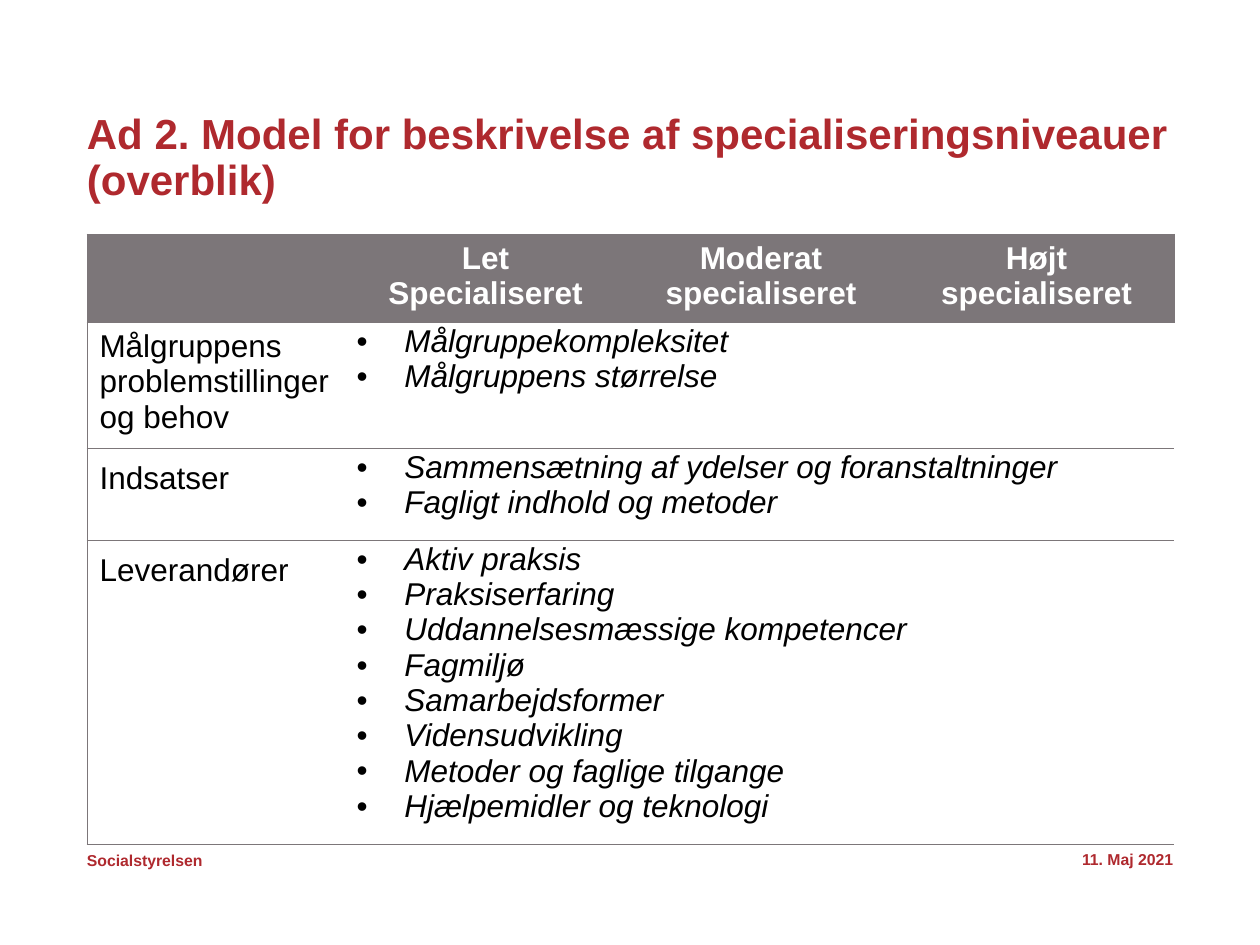
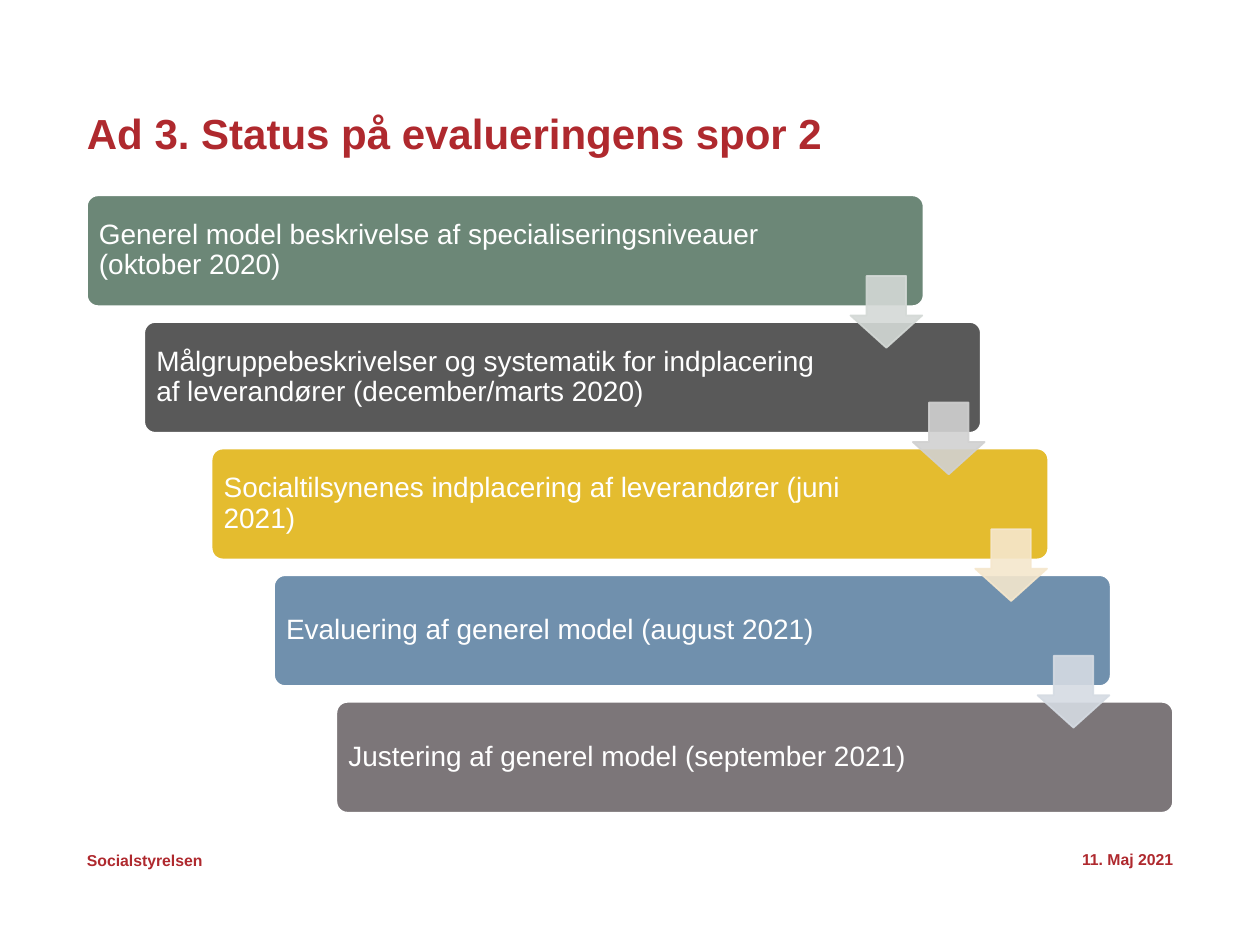
from dataclasses import dataclass
from typing import Optional

from lxml.etree import SubElement
from pptx import Presentation
from pptx.dml.color import RGBColor
from pptx.enum.shapes import MSO_SHAPE as Shape
from pptx.enum.text import MSO_ANCHOR as Anchor, PP_ALIGN as Align
from pptx.oxml.ns import qn
from pptx.util import Emu, Inches, Pt

SLIDE_WIDTH, SLIDE_HEIGHT = Inches(10), Inches(7.5)
GRID_COLUMNS, GRID_ROWS = 100, 75

FONT = "Arial"
RED, GREY, WHITE, BLACK = "AF292E", "7C7679", "FFFFFF", "000000"
LEFT, CONTENT_WIDTH = 6.9, 86.3


@dataclass(frozen=True)
class Box:
    """A place on the slide, in grid columns and rows."""
    left: float
    top: float
    width: float
    height: float

    def emu(self) -> tuple:
        return columns(self.left), rows(self.top), columns(self.width), rows(self.height)


@dataclass(frozen=True)
class Style:
    size: float
    color: str
    bold: bool = False
    italic: bool = False
    align: Align = Align.LEFT
    line_spacing: float = 1.0


@dataclass(frozen=True)
class Topic:
    """A table row: its label, its criteria and the space above the label."""
    label: str
    criteria: tuple
    height: float
    label_top: float


@dataclass(frozen=True)
class Step:
    text: str
    color: str
    arrow_color: Optional[str] = None
    shift: float = 0


TITLE_STYLE = Style(24, RED, bold=True, line_spacing=0.9)
FOOTER_STYLE = Style(9, RED, bold=True)
DATE_STYLE = Style(9, RED, bold=True, align=Align.RIGHT)
HEADER_STYLE = Style(18, WHITE, bold=True, align=Align.CENTER)
LABEL_STYLE = Style(18, BLACK)
CRITERION_STYLE = Style(18, BLACK, italic=True)
STEP_STYLE = Style(16, WHITE, line_spacing=0.9)

TITLE_BOX = Box(LEFT, 9, 86.4, 8.3)
AGENCY_BOX = Box(LEFT, 67.5, 20, 1.5)
DATE_BOX = Box(70.6, 66.2, 22.5, 4)

LEVELS = (("Let", "Specialiseret"), ("Moderat specialiseret",), ("Højt specialiseret",))
TABLE_TOP, HEADER_HEIGHT, LABEL_WIDTH = 18.6, 6.6, 20.7
LEVEL_WIDTH = (CONTENT_WIDTH - LABEL_WIDTH) / len(LEVELS)
TOPICS = (
    Topic("Målgruppens problemstillinger og behov",
          ("Målgruppekompleksitet", "Målgruppens størrelse"), 9.4, 0.5),
    Topic("Indsatser",
          ("Sammensætning af ydelser og foranstaltninger", "Fagligt indhold og metoder"), 7.3, 1),
    Topic("Leverandører",
          ("Aktiv praksis", "Praksiserfaring", "Uddannelsesmæssige kompetencer", "Fagmiljø",
           "Samarbejdsformer", "Vidensudvikling", "Metoder og faglige tilgange",
           "Hjælpemidler og teknologi"), 22.5, 1),
)

FIRST_STEP = Box(LEFT, 15.5, 66.4, 8.8)
STEP_RIGHT, STEP_DOWN = 4.95, 10.05
ARROW_RIGHT, ARROW_DOWN, ARROW_SIZE = 60.6, 6.4, 5.7
STEPS = (
    Step("Generel model beskrivelse af specialiseringsniveauer (oktober 2020)",
         "6C8777", "D4D9D6"),
    Step("Målgruppebeskrivelser og systematik for indplacering af leverandører "
         "(december/marts 2020)", "595959", "D1D1D1", shift=-0.4),
    Step("Socialtilsynenes indplacering af leverandører (juni 2021)", "E4BC2F", "F5E7CD"),
    Step("Evaluering af generel model (august 2021)", "7090AD", "D5DBE3"),
    Step("Justering af generel model (september 2021)", GREY),
)


def columns(count: float) -> Emu:
    return Emu(round(SLIDE_WIDTH * count / GRID_COLUMNS))


def rows(count: float) -> Emu:
    return Emu(round(SLIDE_HEIGHT * count / GRID_ROWS))


def rgb(color: str) -> RGBColor:
    return RGBColor.from_string(color)


def write(frame, paragraphs: tuple, style: Style, bulleted: bool = False) -> None:
    frame.word_wrap = True
    for index, text in enumerate(paragraphs):
        paragraph = frame.paragraphs[0] if index == 0 else frame.add_paragraph()
        paragraph.alignment = style.align
        paragraph.line_spacing = style.line_spacing
        if bulleted:
            add_bullet(paragraph)
        run = paragraph.add_run()
        run.text = text
        run.font.name = FONT
        run.font.size = Pt(style.size)
        run.font.bold = style.bold
        run.font.italic = style.italic
        run.font.color.rgb = rgb(style.color)


def add_bullet(paragraph) -> None:
    properties = paragraph._p.get_or_add_pPr()
    indent = Inches(0.38)
    properties.set("marL", str(indent))
    properties.set("indent", str(-indent))
    SubElement(properties, qn("a:buFont"), typeface=FONT)
    SubElement(properties, qn("a:buChar"), char="•")


def set_margins(target, left: float, top: float, right: float, bottom: float) -> None:
    target.margin_left, target.margin_right = columns(left), columns(right)
    target.margin_top, target.margin_bottom = rows(top), rows(bottom)


def add_text(slide, box: Box, text: str, style: Style, anchor: Anchor = Anchor.TOP) -> None:
    frame = slide.shapes.add_textbox(*box.emu()).text_frame
    set_margins(frame, 0, 0, 0, 0)
    frame.vertical_anchor = anchor
    write(frame, (text,), style)


def add_titled_slide(deck, title: str):
    slide = deck.slides.add_slide(deck.slide_layouts[6])
    add_text(slide, TITLE_BOX, title, TITLE_STYLE)
    add_text(slide, AGENCY_BOX, "Socialstyrelsen", FOOTER_STYLE)
    add_text(slide, DATE_BOX, "11. Maj 2021", DATE_STYLE, Anchor.MIDDLE)
    return slide


def set_borders(cell, visible: str) -> None:
    """Draw the sides named in visible (L, R, T, B) and clear the others."""
    properties = cell._tc.get_or_add_tcPr()
    for position, side in enumerate("LRTB"):
        line = properties.makeelement(qn(f"a:ln{side}"), {"w": str(Pt(0.5))})
        properties.insert(position, line)
        if side in visible:
            SubElement(SubElement(line, qn("a:solidFill")), qn("a:srgbClr"), val=GREY)
        else:
            SubElement(line, qn("a:noFill"))


def add_level_table(slide) -> None:
    heights = (HEADER_HEIGHT, *(topic.height for topic in TOPICS))
    widths = (LABEL_WIDTH, *(LEVEL_WIDTH for _ in LEVELS))
    box = Box(LEFT, TABLE_TOP, CONTENT_WIDTH, sum(heights))
    table = slide.shapes.add_table(len(heights), len(widths), *box.emu()).table
    table.horz_banding = False
    for column, width in zip(table.columns, widths):
        column.width = columns(width)
    last = len(widths) - 1
    for row_index, (row, height) in enumerate(zip(table.rows, heights)):
        row.height = rows(height)
        for column_index, cell in enumerate(row.cells):
            cell.fill.solid()
            cell.fill.fore_color.rgb = rgb(WHITE if row_index else GREY)
            set_borders(cell, "TB" + "L" * (column_index == 0) + "R" * (column_index == last))

    for column_index, level in enumerate(LEVELS, start=1):
        write(table.cell(0, column_index).text_frame, level, HEADER_STYLE)
    for row_index, topic in enumerate(TOPICS, start=1):
        label, criteria = table.cell(row_index, 0), table.cell(row_index, 1)
        criteria.merge(table.cell(row_index, last))
        set_margins(label, 1, topic.label_top, 0.7, 0.5)
        set_margins(criteria, 0.7, 0.1, 0.7, 0)
        write(label.text_frame, (topic.label,), LABEL_STYLE)
        write(criteria.text_frame, topic.criteria, CRITERION_STYLE, bulleted=True)


def add_outlined_shape(slide, kind: Shape, box: Box, adjustments: tuple, fill: str, line: str):
    shape = slide.shapes.add_shape(kind, *box.emu())
    shape.shadow.inherit = False
    for index, value in enumerate(adjustments):
        shape.adjustments[index] = value
    shape.fill.solid()
    shape.fill.fore_color.rgb = rgb(fill)
    shape.line.color.rgb = rgb(line)
    shape.line.width = Pt(1)
    return shape


def add_step(slide, step: Step, box: Box) -> None:
    bar = add_outlined_shape(slide, Shape.ROUNDED_RECTANGLE, box, (0.1,), step.color, WHITE)
    frame = bar.text_frame
    set_margins(frame, 0.7, 0.7, 11.5, 0.7)
    frame.vertical_anchor = Anchor.MIDDLE
    write(frame, (step.text,), STEP_STYLE)


def add_step_arrow(slide, color: str, box: Box) -> None:
    arrow = add_outlined_shape(slide, Shape.DOWN_ARROW, box, (0.55, 0.45), color, color)
    for tint in arrow._element.spPr.iter(qn("a:srgbClr")):
        SubElement(tint, qn("a:alpha"), val="90000")


def add_staircase(slide) -> None:
    places = [(FIRST_STEP.left + index * STEP_RIGHT, FIRST_STEP.top + index * STEP_DOWN)
              for index in range(len(STEPS))]
    for step, (left, top) in zip(STEPS, places):
        add_step(slide, step, Box(left + step.shift, top, FIRST_STEP.width, FIRST_STEP.height))
    for step, (left, top) in zip(STEPS, places):
        if step.arrow_color:
            add_step_arrow(slide, step.arrow_color,
                           Box(left + ARROW_RIGHT, top + ARROW_DOWN, ARROW_SIZE, ARROW_SIZE))


def main() -> None:
    deck = Presentation()
    deck.slide_width, deck.slide_height = SLIDE_WIDTH, SLIDE_HEIGHT
    add_level_table(add_titled_slide(
        deck, "Ad 2. Model for beskrivelse af specialiseringsniveauer (overblik)"))
    add_staircase(add_titled_slide(deck, "Ad 3. Status på evalueringens spor 2"))
    deck.save("out.pptx")


if __name__ == "__main__":
    main()
